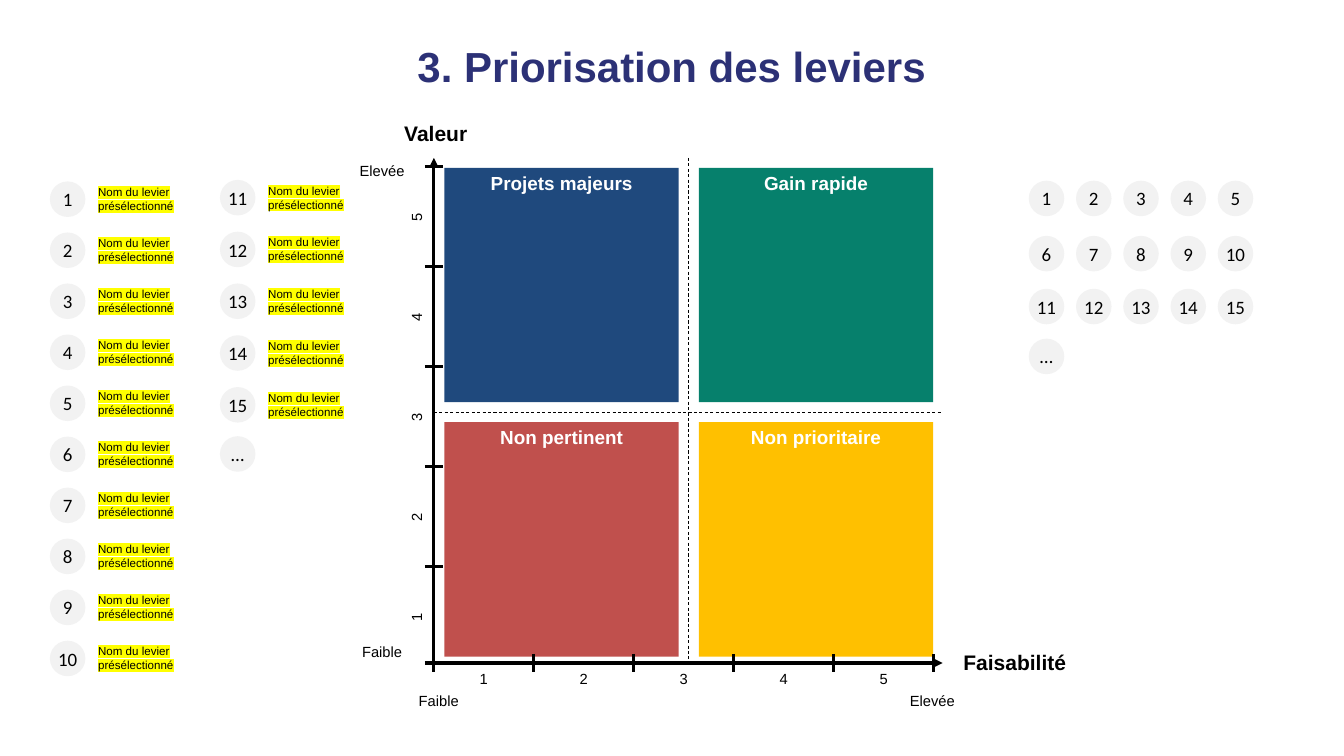
from lxml import etree
from pptx import Presentation
from pptx.dml.color import RGBColor
from pptx.enum.dml import MSO_LINE
from pptx.enum.shapes import MSO_CONNECTOR, MSO_SHAPE
from pptx.enum.text import MSO_ANCHOR, MSO_AUTO_SIZE, PP_ALIGN
from pptx.oxml.ns import qn
from pptx.util import Inches, Pt

BLACK = RGBColor(0, 0, 0)
WHITE = RGBColor(0xFF, 0xFF, 0xFF)
NAVY = RGBColor(0x2C, 0x31, 0x76)
BLUE = RGBColor(0x1F, 0x49, 0x7D)
GREEN = RGBColor(0x06, 0x80, 0x6C)
RED = RGBColor(0xC0, 0x50, 0x4D)
AMBER = RGBColor(0xFF, 0xC0, 0x00)
GREY = RGBColor(0xF2, 0xF2, 0xF2)
YELLOW = RGBColor(0xFF, 0xFF, 0x00)

DOT = 0.47
STEP = 1.3225  # distance between two marks of an axis


def write(shape, text, size=14, font="Arial", color=BLACK, bold=False,
          align=PP_ALIGN.CENTER, anchor=MSO_ANCHOR.TOP, inset=None, highlight=None):
    tf = shape.text_frame
    tf.word_wrap = True
    tf.vertical_anchor = anchor
    if inset is not None:
        tf.margin_left = tf.margin_right = tf.margin_top = tf.margin_bottom = Inches(inset)
    p = tf.paragraphs[0]
    p.alignment = align
    r = p.add_run()
    r.text = text
    r.font.size, r.font.name, r.font.bold = Pt(size), font, bold
    r.font.color.rgb = color
    if highlight is not None:
        mark = etree.Element(qn("a:highlight"))
        etree.SubElement(mark, qn("a:srgbClr"), val=str(highlight))
        r.font._element.find(qn("a:solidFill")).addnext(mark)


def add_text(s, text, x, y, w, h, rotation=0, **fmt):
    box = s.shapes.add_textbox(Inches(x), Inches(y), Inches(w), Inches(h))
    box.rotation = rotation
    write(box, text, **fmt)
    box.text_frame.auto_size = MSO_AUTO_SIZE.SHAPE_TO_FIT_TEXT


def add_shape(s, kind, text, x, y, w, h, fill, **fmt):
    sp = s.shapes.add_shape(kind, Inches(x), Inches(y), Inches(w), Inches(h))
    sp.shadow.inherit = False
    sp.fill.solid()
    sp.fill.fore_color.rgb = fill
    sp.line.fill.background()
    write(sp, text, **fmt)


def add_line(s, x1, y1, x2, y2, width=3, dashed=False, arrow=False):
    line = s.shapes.add_connector(MSO_CONNECTOR.STRAIGHT, Inches(x1), Inches(y1),
                                  Inches(x2), Inches(y2))
    line.line.color.rgb = BLACK
    line.line.width = Pt(width)
    if dashed:
        line.line.dash_style = MSO_LINE.DASH
    if arrow:
        etree.SubElement(line.line._get_or_add_ln(), qn("a:tailEnd"), type="triangle")
    etree.SubElement(line._element.spPr, qn("a:effectLst"))


def add_dot(s, text, x, y):
    add_shape(s, MSO_SHAPE.OVAL, text, x, y, DOT, DOT, GREY, size=18, font="Calibri",
              anchor=MSO_ANCHOR.MIDDLE, inset=0)


def add_axes(s, x, y, w, h):
    """Arrows, names and dashed middle lines; the origin is the lower left corner."""
    base = y + h
    add_line(s, x, base, x + w, base, arrow=True)
    add_line(s, x, base + 0.05, x, y, arrow=True)
    add_text(s, "Faisabilité", x + 6.32, base - 0.23, 2.73, 0.44, size=20, bold=True)
    add_text(s, "Valeur", x - 1.34, y - 0.55, 2.73, 0.44, size=20, bold=True)
    add_line(s, x, y + 3.36, x + w, y + 3.36, width=0.75, dashed=True)
    add_line(s, x + 3.37, y, x + 3.37, base + 0.05, width=0.75, dashed=True)


def add_quadrants(s, x, y, side, pitch):
    quadrants = [("Projets majeurs", BLUE), ("Gain rapide", GREEN),
                 ("Non pertinent", RED), ("Non prioritaire", AMBER)]
    for i, (name, fill) in enumerate(quadrants):
        row, col = divmod(i, 2)
        add_shape(s, MSO_SHAPE.RECTANGLE, name, x + col * pitch, y + row * pitch,
                  side, side, fill, size=18, color=WHITE, bold=True)


def add_scales(s, x, y, base):
    # Ends of each axis
    for text, left, top in [("Elevée", x + 5.98, base + 0.33), ("Faible", x - 0.55, base + 0.33),
                            ("Elevée", x - 1.3, y - 0.11), ("Faible", x - 1.3, base - 0.31)]:
        add_text(s, text, left, top, 1.23, 0.34)
    # Marks
    for i in range(6):
        mark_x = x + i * STEP
        mark_y = min(y + i * STEP, base)
        add_line(s, mark_x, base - 0.12, mark_x, base + 0.12)
        add_line(s, x - 0.12, mark_y, x + 0.12, mark_y)
    # Scores
    for i in range(5):
        add_text(s, str(i + 1), x + 0.5 + i * STEP, base + 0.04, 0.32, 0.34)
        add_text(s, str(5 - i), x - 0.39, y + 0.5 + i * STEP, 0.32, 0.34, rotation=270)


def add_levers(s, numbers, x, y, pitch):
    """One column of numbered levers."""
    for i, number in enumerate(numbers):
        top = y + i * pitch
        add_dot(s, str(number), x, top)
        add_text(s, "Nom du levier présélectionné", x + 0.54, top, 1.3, DOT, size=11,
                 align=PP_ALIGN.LEFT, highlight=YELLOW)


def add_dot_stock(s, x, tops, pitch):
    """Loose numbers, to be moved onto the matrix."""
    for row, top in enumerate(tops):
        for col in range(5):
            add_dot(s, str(row * 5 + col + 1), x + col * pitch, top)


def main():
    prs = Presentation()
    prs.slide_width, prs.slide_height = Inches(17.78), Inches(10)
    s = prs.slides.add_slide(prs.slide_layouts[6])

    add_text(s, "3. Priorisation des leviers", 1.09, 0.54, 15.59, 0.67,
             size=40, color=NAVY, bold=True, inset=0)

    # Matrix
    add_axes(s, 5.74, 2.09, 6.73, 6.68)
    add_quadrants(s, 5.88, 2.22, side=3.1, pitch=3.365)
    add_scales(s, 5.74, 2.2, base=8.77)

    # Levers on the left
    add_levers(s, range(1, 11), 0.66, 2.4, pitch=0.675)
    add_levers(s, range(11, 16), 2.91, 2.38, pitch=0.685)
    add_dot(s, "…", 2.91, 5.77)

    # Numbers on the right
    add_dot_stock(s, 13.61, [2.39, 3.12, 3.82], pitch=0.625)
    add_dot(s, "…", 13.61, 4.48)

    prs.save("out.pptx")


if __name__ == "__main__":
    main()
